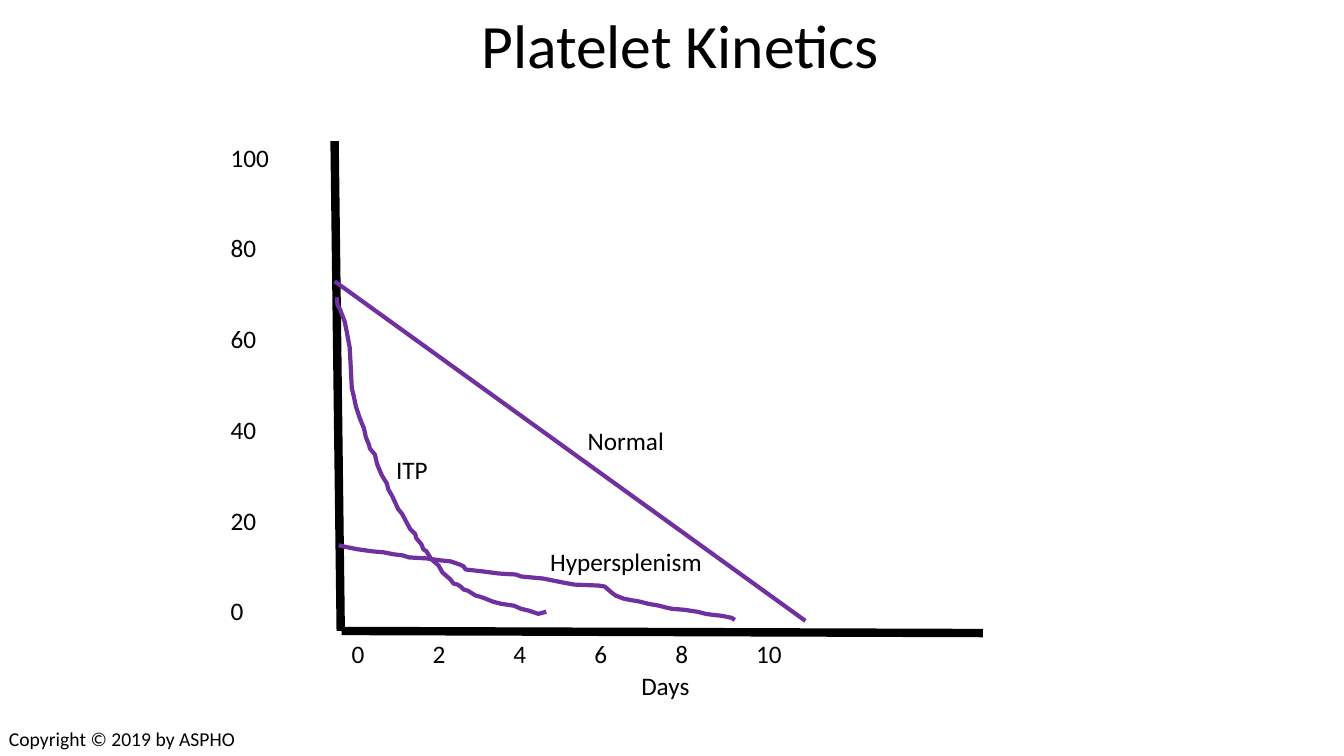
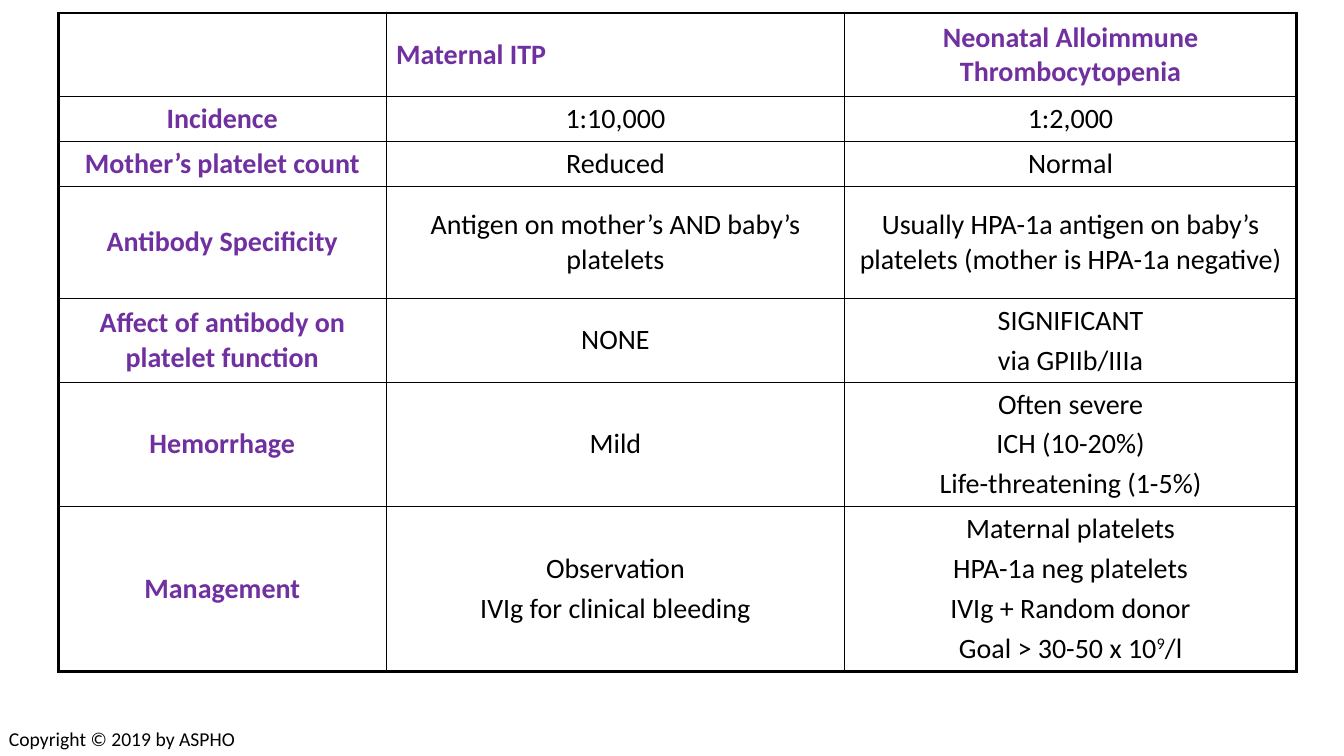
from dataclasses import dataclass
from itertools import product

from lxml import etree
from pptx import Presentation
from pptx import util as u
from pptx.dml.color import RGBColor
from pptx.enum import text
from pptx.oxml import ns

BLACK = RGBColor(0x00, 0x00, 0x00)
PURPLE = RGBColor(0x70, 0x30, 0xA0)
WHITE = RGBColor(0xFF, 0xFF, 0xFF)
FONT = "Calibri"
LEFT = text.PP_ALIGN.LEFT
CENTER = text.PP_ALIGN.CENTER
TOP = text.MSO_ANCHOR.TOP
BOTTOM = text.MSO_ANCHOR.BOTTOM
MIDDLE = text.MSO_ANCHOR.MIDDLE
THICK_BORDER = 2.25
THIN_BORDER = 1


@dataclass(frozen=True)
class Label:
    words: str
    left: float
    top: float
    width: float
    height: float = 28.8
    size: float = 18
    align: text.PP_ALIGN = LEFT
    anchor: text.MSO_ANCHOR = TOP
    space: float = 0
    tab_step: float = 0


@dataclass(frozen=True)
class Line:
    start: tuple[float, float]
    end: tuple[float, float]
    color: RGBColor
    width: float


FOOTER = Label("Copyright © 2019 by ASPHO", -0.7, 515.5, 178.6, 24.5, size=14)

LABELS = [
    Label("Platelet Kinetics", 270, 6.5, 432, 54.7, size=44, align=CENTER, anchor=BOTTOM),
    Label("0\t2\t4\t6\t8\t10", 244.1, 452.2, 496.8, tab_step=57.8),
    Label("Days", 243.4, 475.2, 463.7, align=CENTER),
    Label("100\n80\n60\n40\n20\n0", 157.7, 97.9, 70.6, 356.4, space=43.2),
    Label("Hypersplenism", 385.9, 386.6, 133.9),
    Label("Normal", 412.6, 300.2, 89.3),
    Label("ITP", 275.8, 321.1, 89.3),
]

LINES = [
    Line((239, 100.8), (243.4, 450.7), BLACK, 6),
    Line((244.1, 450.7), (702, 452.2), BLACK, 6),
    Line((239, 200.9), (575.3, 443.5), PURPLE, 3),
]

ITP_CURVE = [
    (240.5, 212.4), (241.2, 218.2), (242.6, 220.3), (246.2, 229.7), (247.7, 236.9),
    (249.8, 248.4), (250.6, 263), (251.3, 277.2), (252.7, 283), (254.2, 290.2),
    (257, 298.8), (258.5, 302.4), (260, 306), (261.4, 312.5), (263.5, 317.5),
    (264.2, 320.4), (267.8, 324.7), (269.3, 331.2), (270.7, 334.8), (272.9, 339.8),
    (276.5, 345.6), (277.2, 349.2), (280.1, 354.2), (284.4, 363.6), (287.3, 367.2),
    (293, 378), (296.6, 381.6), (297.4, 384.5), (301, 388.8), (302.4, 392.4),
    (304.6, 393.8), (308.2, 399.6), (313.2, 403.9), (316.1, 409), (321.8, 414),
    (324, 416.9), (326.9, 417.6), (329, 419), (331.2, 421.2), (334.1, 421.9),
    (339.8, 425.5), (342.7, 426.2), (347, 427.7), (352.1, 429.8), (357.8, 431.3),
    (367.2, 432.7), (372.2, 434.9), (378, 436.3), (384.5, 438.5), (390.2, 437),
]

HYPERSPLENISM_CURVE = [
    (241.9, 389.5), (248.4, 391), (255.6, 392.4), (265.7, 393.8), (274.3, 394.6),
    (281.5, 396), (287.3, 396.7), (292.3, 398.2), (304.6, 398.9), (314.6, 400.3),
    (321.8, 401), (328.3, 403.2), (331.2, 404.6), (332.6, 406.8), (344.9, 408.2),
    (356.4, 409.7), (368.6, 410.4), (372.2, 411.8), (388.1, 413.3), (402.5, 416.2),
    (410.4, 417.6), (427.7, 418.3), (432, 419), (437, 423.4), (439.9, 425.5),
    (445.7, 427.7), (449.3, 428.4), (457.2, 429.8), (463, 431.3), (470.9, 432.7),
    (476.6, 434.2), (480.2, 434.9), (488.9, 435.6), (498.2, 437), (504, 438.5),
    (509, 439.2), (515.5, 439.9), (522.7, 441.4), (524.9, 442.8),
]

COLUMN_WIDTHS = [234, 327.6, 322.6]
ROW_HEIGHTS = [60, 32, 32, 80, 60, 88.5, 118]
COMPARISON = [
    ("", "Maternal ITP", "Neonatal Alloimmune Thrombocytopenia"),
    ("Incidence", "1:10,000", "1:2,000"),
    ("Mother’s platelet count", "Reduced", "Normal"),
    (
        "Antibody Specificity",
        "Antigen on mother’s AND baby’s platelets",
        "Usually HPA-1a antigen on baby’s platelets (mother is HPA-1a negative)",
    ),
    ("Affect of antibody on platelet function", "NONE", "SIGNIFICANT\nvia GPIIb/IIIa"),
    ("Hemorrhage", "Mild", "Often severe\nICH (10-20%)\nLife-threatening (1-5%)"),
    (
        "Management",
        "Observation\nIVIg for clinical bleeding",
        "Maternal platelets\nHPA-1a neg platelets\nIVIg + Random donor\nGoal > 30-50 x 10^9^/l",
    ),
]


def write_text(
    frame,
    words: str,
    *,
    size: float,
    color: RGBColor = BLACK,
    bold: bool = False,
    align: text.PP_ALIGN = LEFT,
    space: float = 0,
    tab_step: float = 0,
) -> None:
    for index, line in enumerate(words.split("\n")):
        paragraph = frame.add_paragraph() if index else frame.paragraphs[0]
        paragraph.alignment = align
        if index and space:
            paragraph.space_before = u.Pt(space)
        if tab_step:
            add_tabs(paragraph, line.count("\t"), tab_step)
        for part_index, part in enumerate(line.split("^")):
            run = paragraph.add_run()
            run.text = part
            run.font.name = FONT
            run.font.size = u.Pt(size)
            run.font.bold = bold
            run.font.color.rgb = color
            if part_index % 2:
                run._r.get_or_add_rPr().set("baseline", "30000")


def add_tabs(paragraph, count: int, step: float) -> None:
    tabs = etree.SubElement(paragraph._p.get_or_add_pPr(), ns.qn("a:tabLst"))
    for number in range(1, count + 1):
        etree.SubElement(tabs, ns.qn("a:tab"), pos=str(u.Pt(number * step)), algn="l")


def add_label(slide, label: Label) -> None:
    box = slide.shapes.add_textbox(
        u.Pt(label.left), u.Pt(label.top), u.Pt(label.width), u.Pt(label.height)
    )
    frame = box.text_frame
    frame.word_wrap = True
    frame.vertical_anchor = label.anchor
    write_text(
        frame, label.words, size=label.size, align=label.align,
        space=label.space, tab_step=label.tab_step,
    )


def add_line(slide, line: Line) -> None:
    ends = [u.Pt(value) for value in (*line.start, *line.end)]
    connector = slide.shapes.add_connector(1, *ends)
    connector.line.color.rgb = line.color
    connector.line.width = u.Pt(line.width)
    etree.SubElement(connector._element.spPr, ns.qn("a:effectLst"))


def add_curve(slide, points: list[tuple[float, float]]) -> None:
    start, *rest = [(u.Pt(x), u.Pt(y)) for x, y in points]
    builder = slide.shapes.build_freeform(*start)
    builder.add_line_segments(rest, close=False)
    shape = builder.convert_to_shape()
    shape.shadow.inherit = False
    shape.fill.background()
    shape.line.color.rgb = PURPLE
    shape.line.width = u.Pt(3)


def set_borders(cell, widths: dict[str, float]) -> None:
    properties = cell._tc.get_or_add_tcPr()
    for side, width in widths.items():
        border = etree.SubElement(properties, ns.qn(f"a:ln{side}"), w=str(u.Pt(width)))
        fill = etree.SubElement(border, ns.qn("a:solidFill"))
        etree.SubElement(fill, ns.qn("a:srgbClr"), val=str(BLACK))


def add_comparison(slide) -> None:
    row_count, column_count = len(ROW_HEIGHTS), len(COLUMN_WIDTHS)
    table = slide.shapes.add_table(
        row_count, column_count, u.Pt(41.8), u.Pt(9.2),
        u.Pt(sum(COLUMN_WIDTHS)), u.Pt(sum(ROW_HEIGHTS)),
    ).table
    table.first_row = False
    table.horz_banding = False
    for column, width in zip(table.columns, COLUMN_WIDTHS):
        column.width = u.Pt(width)
    for row, height in zip(table.rows, ROW_HEIGHTS):
        row.height = u.Pt(height)
    for row, column in product(range(row_count), range(column_count)):
        cell = table.cell(row, column)
        outer = {
            "L": column == 0,
            "R": column == column_count - 1,
            "T": row == 0,
            "B": row == row_count - 1,
        }
        set_borders(
            cell,
            {side: THICK_BORDER if edge else THIN_BORDER for side, edge in outer.items()},
        )
        cell.fill.background()
        cell.vertical_anchor = MIDDLE
        words = COMPARISON[row][column]
        heading = row == 0 or column == 0
        if words:
            write_text(
                cell.text_frame, words, size=20, bold=heading,
                color=PURPLE if heading else BLACK,
                align=LEFT if (row, column) == (0, 1) else CENTER, space=4,
            )


def add_slide(presentation):
    slide = presentation.slides.add_slide(presentation.slide_layouts[6])
    slide.background.fill.solid()
    slide.background.fill.fore_color.rgb = WHITE
    add_label(slide, FOOTER)
    return slide


def main() -> None:
    presentation = Presentation()
    presentation.slide_width = u.Pt(960)
    presentation.slide_height = u.Pt(540)

    kinetics = add_slide(presentation)
    for line in LINES:
        add_line(kinetics, line)
    for curve in (ITP_CURVE, HYPERSPLENISM_CURVE):
        add_curve(kinetics, curve)
    for label in LABELS:
        add_label(kinetics, label)

    add_comparison(add_slide(presentation))
    presentation.save("out.pptx")


if __name__ == "__main__":
    main()
